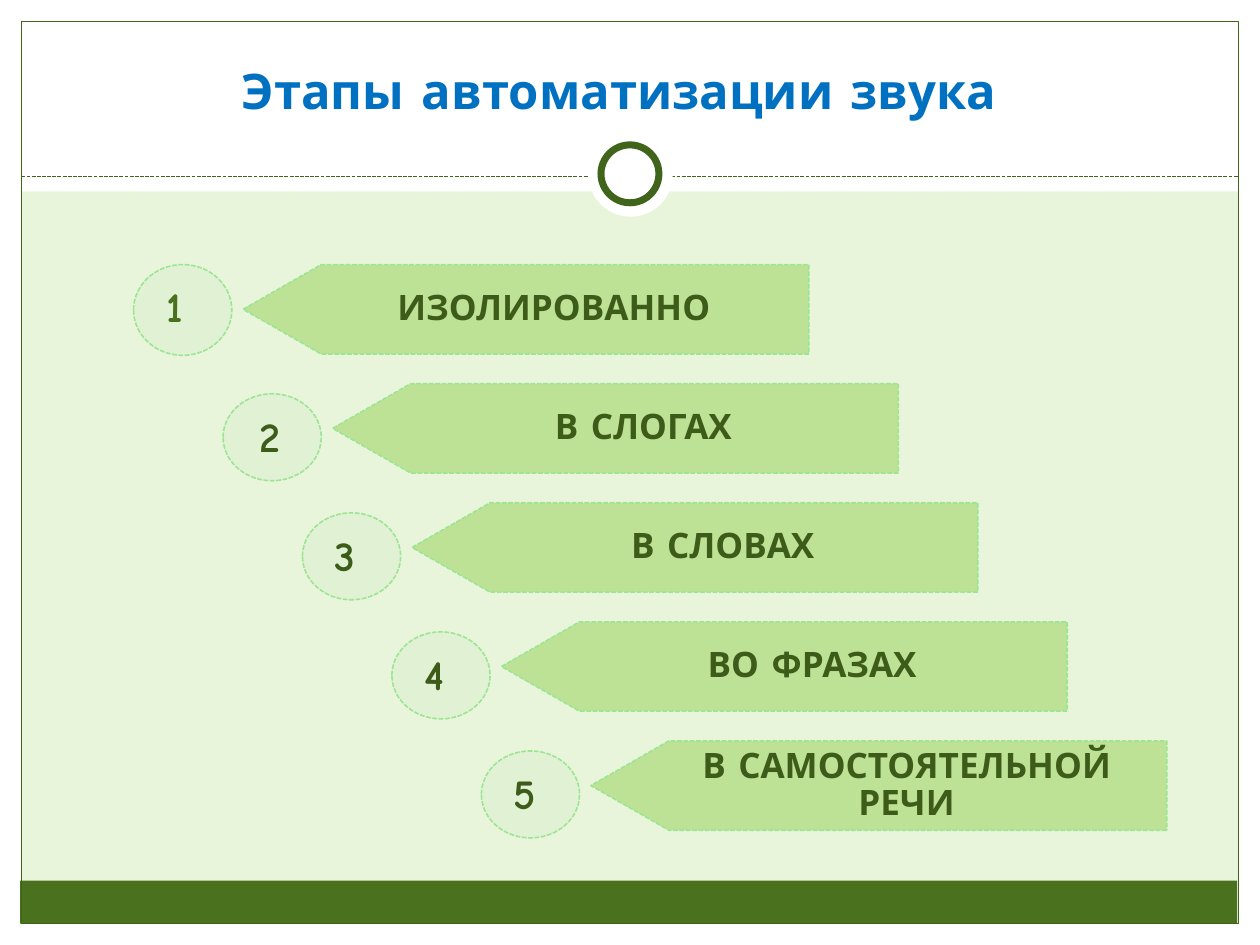
from lxml import etree
from pptx import Presentation
from pptx.dml.color import RGBColor
from pptx.enum.dml import MSO_LINE
from pptx.enum.shapes import MSO_CONNECTOR, MSO_SHAPE
from pptx.enum.text import MSO_ANCHOR, MSO_AUTO_SIZE, PP_ALIGN
from pptx.oxml.ns import qn
from pptx.util import Inches, Pt

RECTANGLE, OVAL = MSO_SHAPE.RECTANGLE, MSO_SHAPE.OVAL
DASH = MSO_LINE.SQUARE_DOT
LEFT, CENTER = PP_ALIGN.LEFT, PP_ALIGN.CENTER
FONT = "Comic Neue"

WHITE = RGBColor(0xFF, 0xFF, 0xFF)
BACKGROUND = RGBColor(0xE9, 0xF5, 0xDB)
GREEN = RGBColor(0x49, 0x71, 0x1E)
FRAME_GREEN = RGBColor(0x40, 0x64, 0x1A)
TEXT_GREEN = RGBColor(0x3D, 0x5B, 0x19)
ARROW_GREEN = RGBColor(0xBD, 0xE2, 0x96)
CIRCLE_GREEN = RGBColor(0xE1, 0xF1, 0xD3)
EDGE_GREEN = RGBColor(0x9C, 0xE5, 0x94)
TITLE_BLUE = RGBColor(0x00, 0x70, 0xC0)


def style(shape, fill=None, line=None, width=0.75, dash=None):
    shape.shadow.inherit = False
    if fill is None:
        shape.fill.background()
    else:
        shape.fill.solid()
        shape.fill.fore_color.rgb = fill
    if line is None:
        shape.line.fill.background()
    else:
        shape.line.color.rgb = line
        shape.line.width = Pt(width)
        if dash is not None:
            shape.line.dash_style = dash


def write(frame, text, size, color, align):
    para = frame.paragraphs[0]
    para.alignment = align
    span = para.add_run()
    span.text = text
    span.font.name = FONT
    span.font.size = Pt(size)
    span.font.bold = True
    span.font.color.rgb = color
    return para


deck = Presentation()
deck.slide_width, deck.slide_height = Inches(10), Inches(7.5)
slide = deck.slides.add_slide(deck.slide_layouts[5])
shapes = slide.shapes
slide.background.fill.solid()
slide.background.fill.fore_color.rgb = BACKGROUND

# White margins, footer band and frame
for left, top, width, height, fill, line in [
    (0, 7.33, 10, 0.17, WHITE, None),
    (0, 0, 10, 1.52, WHITE, None),
    (0, 0, 0.17, 7.5, WHITE, None),
    (9.83, 0, 0.17, 7.5, WHITE, None),
    (0.16, 6.99, 9.66, 0.34, GREEN, None),
    (0.17, 0.17, 9.66, 7.16, None, FRAME_GREEN),
]:
    panel = shapes.add_shape(RECTANGLE, Inches(left), Inches(top), Inches(width), Inches(height))
    style(panel, fill, line)

# Dashed divider with a ring in the middle
divider = shapes.add_connector(MSO_CONNECTOR.STRAIGHT, Inches(0.17), Inches(1.4), Inches(9.83), Inches(1.4))
divider.line.color.rgb = FRAME_GREEN
divider.line.width = Pt(0.75)
divider.line.dash_style = DASH
etree.SubElement(divider._element.spPr, qn("a:effectLst"))
for left, top, size, line in [(4.67, 1.05, 0.67, None), (4.77, 1.15, 0.46, FRAME_GREEN)]:
    ring = shapes.add_shape(OVAL, Inches(left), Inches(top), Inches(size), Inches(size))
    style(ring, WHITE, line, 4)

# Title, brought in front of the white band
title = shapes.title
title.left, title.top, title.width, title.height = Inches(0.98), Inches(0.21), Inches(7.87), Inches(0.79)
title.text_frame.vertical_anchor = MSO_ANCHOR.BOTTOM
write(title.text_frame, "Этапы автоматизации звука", 28, TITLE_BLUE, CENTER)
shapes._spTree.append(title._element)

# Steps: label, arrow left and width, circle drop and height,
# number offset, number width, alignment, colour
STEPS = [
    ("ИЗОЛИРОВАННО", 1.93, 4.49, 0, 0.72, 0.16, 0.31, LEFT, GREEN),
    ("В СЛОГАХ", 2.64, 4.49, 0.08, 0.69, 0.08, 0.59, CENTER, TEXT_GREEN),
    ("В СЛОВАХ", 3.27, 4.49, 0.08, 0.69, 0.16, 0.5, LEFT, TEXT_GREEN),
    ("ВО ФРАЗАХ", 3.98, 4.49, 0.08, 0.69, 0.16, 0.47, LEFT, TEXT_GREEN),
    ("В САМОСТОЯТЕЛЬНОЙ РЕЧИ", 4.69, 4.57, 0.08, 0.69, 0.16, 0.47, LEFT, TEXT_GREEN),
]
FIRST_TOP, LAST_TOP = 2.1, 5.88
ARROW_HEIGHT, TIP = 0.71, 0.62
pitch = (LAST_TOP - FIRST_TOP) / (len(STEPS) - 1)

for index, step in enumerate(STEPS):
    label, left, width, drop, circle_height, offset, number_width, align, color = step
    top = FIRST_TOP + index * pitch
    right, bottom = left + width, top + ARROW_HEIGHT

    # Arrow pointing left
    outline = [(right, bottom), (left + TIP, bottom), (left, top + ARROW_HEIGHT / 2),
               (left + TIP, top), (right, top)]
    points = [(Inches(x), Inches(y)) for x, y in outline]
    builder = shapes.build_freeform(*points[0])
    builder.add_line_segments(points[1:], close=True)
    arrow = builder.convert_to_shape()
    style(arrow, ARROW_GREEN, EDGE_GREEN, 0.9, DASH)
    frame = arrow.text_frame
    frame.word_wrap = True
    frame.vertical_anchor = MSO_ANCHOR.MIDDLE
    frame.margin_left, frame.margin_right = Inches(0.85), Inches(0.41)
    frame.margin_top = frame.margin_bottom = Inches(0.22)
    para = write(frame, label, 20, TEXT_GREEN, CENTER)
    para.line_spacing = 0.9
    para.space_after = Pt(7)

    # Numbered circle
    circle_left, circle_top = left - 0.87, top + drop
    circle = shapes.add_shape(OVAL, Inches(circle_left), Inches(circle_top), Inches(0.78), Inches(circle_height))
    style(circle, CIRCLE_GREEN, EDGE_GREEN, 0.9, DASH)
    box = shapes.add_textbox(Inches(circle_left + offset), Inches(circle_top + 0.08),
                             Inches(number_width), Inches(0.5))
    box.text_frame.word_wrap = True
    box.text_frame.auto_size = MSO_AUTO_SIZE.SHAPE_TO_FIT_TEXT
    write(box.text_frame, str(index + 1), 24, color, align)

deck.save("out.pptx")
